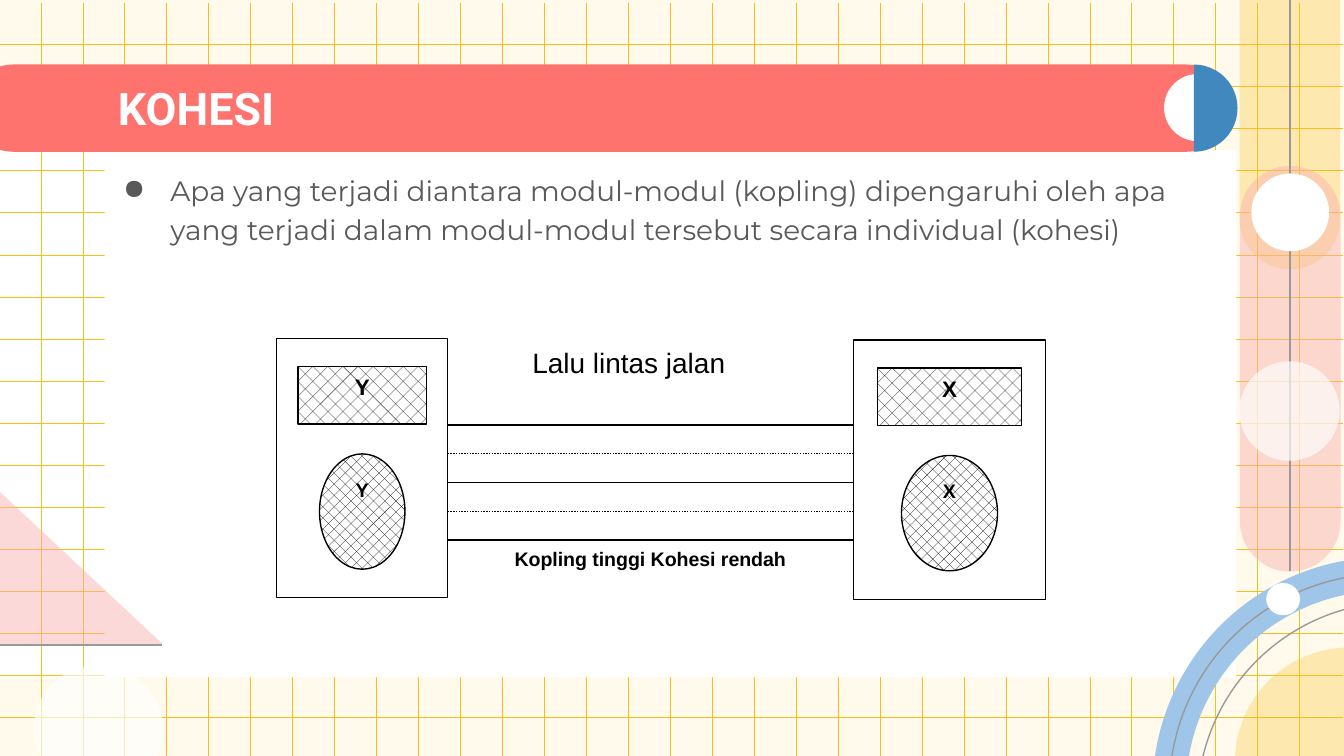
from lxml import etree
from pptx import Presentation
from pptx.dml.color import RGBColor
from pptx.enum.dml import MSO_LINE, MSO_PATTERN
from pptx.enum.shapes import MSO_CONNECTOR, MSO_SHAPE
from pptx.enum.text import MSO_ANCHOR, PP_ALIGN
from pptx.oxml.ns import qn
from pptx.util import Cm, Pt

RECT, PILL, ELLIPSE = MSO_SHAPE.RECTANGLE, MSO_SHAPE.ROUNDED_RECTANGLE, MSO_SHAPE.OVAL
PIE, ARC, TRIANGLE = MSO_SHAPE.PIE, MSO_SHAPE.ARC, MSO_SHAPE.RIGHT_TRIANGLE
STRAIGHT = MSO_CONNECTOR.STRAIGHT
DOTTED = MSO_LINE.ROUND_DOT
SPARSE, DENSE = MSO_PATTERN.from_xml("pct25"), MSO_PATTERN.from_xml("pct40")
TOP, MIDDLE = MSO_ANCHOR.TOP, MSO_ANCHOR.MIDDLE
LEFT, CENTER = PP_ALIGN.LEFT, PP_ALIGN.CENTER

COLORS = {
    "cream": "FFFAEB",
    "white": "FFFFFF",
    "black": "000000",
    "yellow": "FBBE18",
    "coral": "FF736E",
    "pink": "F8B0AD",
    "blue": "4088BE",
    "sky": "9FC5E8",
    "gray": "999999",
    "body": "595959",
}
UPPER_LEFT_QUARTER = (108, 162)
RIGHT_HALF = (162, 54)


def rgb(name):
    return RGBColor.from_string(COLORS[name])


def add_figure(slide, kind, place, fill=None, alpha=None, pattern=None,
               line=None, width=0.75, adjust=(), rotation=0):
    figure = slide.shapes.add_shape(kind, *map(Cm, place))
    figure.shadow.inherit = False
    figure.rotation = rotation
    for index, value in enumerate(adjust):
        figure.adjustments[index] = value
    if pattern:
        figure.fill.patterned()
        figure.fill.pattern = pattern
        figure.fill.fore_color.rgb = rgb("black")
        figure.fill.back_color.rgb = rgb("white")
    elif fill:
        figure.fill.solid()
        figure.fill.fore_color.rgb = rgb(fill)
    else:
        figure.fill.background()
    if alpha:
        color = figure._element.spPr.find(qn("a:solidFill")).find(qn("a:srgbClr"))
        etree.SubElement(color, qn("a:alpha")).set("val", str(alpha * 1000))
    if line:
        figure.line.color.rgb = rgb(line)
        figure.line.width = Pt(width)
    else:
        figure.line.fill.background()
    return figure


def add_line(slide, x1, y1, x2, y2, color, width=0.75, dash=None):
    line = slide.shapes.add_connector(STRAIGHT, Cm(x1), Cm(y1), Cm(x2), Cm(y2))
    line.line.color.rgb = rgb(color)
    line.line.width = Pt(width)
    if dash:
        line.line.dash_style = dash
    etree.SubElement(line._element.spPr, qn("a:effectLst"))


def write(holder, text, size, font="Arial", color="black", bold=False,
          align=CENTER, anchor=TOP, margins=(0.25, 0.13, 0.25, 0.13)):
    frame = holder.text_frame
    frame.word_wrap = True
    frame.vertical_anchor = anchor
    (frame.margin_left, frame.margin_top,
     frame.margin_right, frame.margin_bottom) = map(Cm, margins)
    paragraph = frame.paragraphs[0]
    paragraph.alignment = align
    run = paragraph.add_run()
    run.text = text
    run.font.size = Pt(size)
    run.font.name = font
    run.font.bold = bold
    run.font.color.rgb = rgb(color)
    return paragraph


def add_text(slide, place, text, size, **style):
    return write(slide.shapes.add_textbox(*map(Cm, place)), text, size, **style)


def add_bullet(paragraph, color):
    properties = paragraph._p.get_or_add_pPr()
    properties.set("marL", str(Cm(1.27)))
    properties.set("indent", str(-Cm(0.89)))
    bullet_color = etree.SubElement(properties, qn("a:buClr"))
    etree.SubElement(bullet_color, qn("a:srgbClr")).set("val", COLORS[color])
    etree.SubElement(properties, qn("a:buChar")).set("char", "●")


def add_grid(slide):
    columns, rows = 30, 16
    for column in range(columns + 1):
        x = 0.77 + column * (24.56 - 0.77) / columns
        add_line(slide, x, 0.05, x, 14.35, "yellow", 0.19)
    for row in range(rows + 1):
        y = 0.84 + row * (13.56 - 0.84) / rows
        add_line(slide, 25.38, y, -0.03, y, "yellow", 0.19)


def add_backdrop(slide):
    add_figure(slide, RECT, (-0.2, 2.84, 2.44, 9.96), "white")
    add_figure(slide, PILL, (21.18, 0.94, 6.4, 1.9), "yellow", 28,
               adjust=(0.5,), rotation=270)
    add_grid(slide)
    add_figure(slide, RECT, (1.98, 2.84, 21.39, 9.96), "white")
    add_figure(slide, PILL, (-0.58, 1.22, 23.83, 1.65), "coral", adjust=(0.5,))
    add_figure(slide, ELLIPSE, (22, 1.4, 1.27, 1.27), "white")
    add_figure(slide, PIE, (21.74, 1.22, 1.65, 1.65), "blue", adjust=RIGHT_HALF)


def add_ornaments(slide):
    for left, top, size, color, width in (
        (22.1, 10.85, 8.15, "sky", 18),
        (22.1, 10.85, 8.15, "gray", 0.75),
        (22.63, 11.38, 7.62, "gray", 0.75),
    ):
        add_figure(slide, ARC, (left, top, size, size), line=color, width=width,
                   adjust=UPPER_LEFT_QUARTER)
    add_figure(slide, ELLIPSE, (23.93, 11.02, 0.64, 0.61), "white")
    add_figure(slide, PIE, (23.34, 12.24, 4.32, 4.32), "yellow", 28,
               adjust=UPPER_LEFT_QUARTER)
    add_figure(slide, PILL, (20.55, 6.02, 7.67, 1.9), "pink", 47,
               adjust=(0.5,), rotation=270)
    add_line(slide, 24.38, -1.3, 24.38, 10.8, "gray")
    add_figure(slide, ELLIPSE, (23.42, 6.83, 1.9, 1.88), "white", 66)
    add_figure(slide, ELLIPSE, (23.65, 3.28, 1.47, 1.47), "white")
    add_figure(slide, TRIANGLE, (0, 9.3, 3.07, 2.87), "pink", 47)
    add_figure(slide, ELLIPSE, (0.64, 12.57, 2.44, 2.41), "white", 66)
    add_line(slide, -0.38, 12.19, 3.07, 12.19, "gray")


def add_module(slide, letter, left, top, width):
    add_figure(slide, RECT, (left, top, width, 4.9), "white", line="black")
    for kind, share, offset, height, pattern, size in (
        (RECT, 0.75, 0.53, 1.09, SPARSE, 12),
        (ELLIPSE, 0.5, 2.18, 2.18, DENSE, 10.5),
    ):
        inset = width * (1 - share) / 2
        place = (left + inset, top + offset, width * share, height)
        part = add_figure(slide, kind, place, pattern=pattern, line="black")
        write(part, letter, size, bold=True)


def add_coupling(slide):
    y_left, y_width, x_left = 5.23, 3.23, 16.13
    road_left = y_left + y_width
    road_width = x_left - road_left
    add_module(slide, "Y", y_left, 6.4, y_width)
    add_module(slide, "X", x_left, 6.43, 3.63)
    for lane in range(5):
        y = 8.03 + lane * 2.18 / 4
        add_line(slide, road_left, y, x_left, y, "black",
                 dash=DOTTED if lane % 2 else None)
    add_text(slide, (9.27, 6.4, 5.23, 1.4), "Lalu lintas jalan", 15)
    add_text(slide, (road_left, 10.21, road_width, 2.03),
             "Kopling tinggi Kohesi rendah", 10.5, bold=True)


def main():
    presentation = Presentation()
    presentation.slide_width, presentation.slide_height = Cm(25.4), Cm(14.29)
    slide = presentation.slides.add_slide(presentation.slide_layouts[6])
    slide.background.fill.solid()
    slide.background.fill.fore_color.rgb = rgb("cream")
    add_backdrop(slide)
    add_ornaments(slide)
    add_text(slide, (1.98, 1.52, 19.61, 1.04), "KOHESI", 24, font="Roboto",
             color="white", bold=True, align=LEFT, anchor=MIDDLE,
             margins=(0.25, 0.25, 0.25, 0.25))
    statement = add_text(
        slide, (1.7, 1.52, 20.88, 11.63),
        "Apa yang terjadi diantara modul-modul (kopling) dipengaruhi oleh apa "
        "yang terjadi dalam modul-modul tersebut secara individual (kohesi)",
        15, font="Montserrat", color="body", align=LEFT,
        margins=(0.25, 2.12, 0.25, 0.25))
    statement.line_spacing = 1.15
    add_bullet(statement, "body")
    add_coupling(slide)
    presentation.save("out.pptx")


if __name__ == "__main__":
    main()
